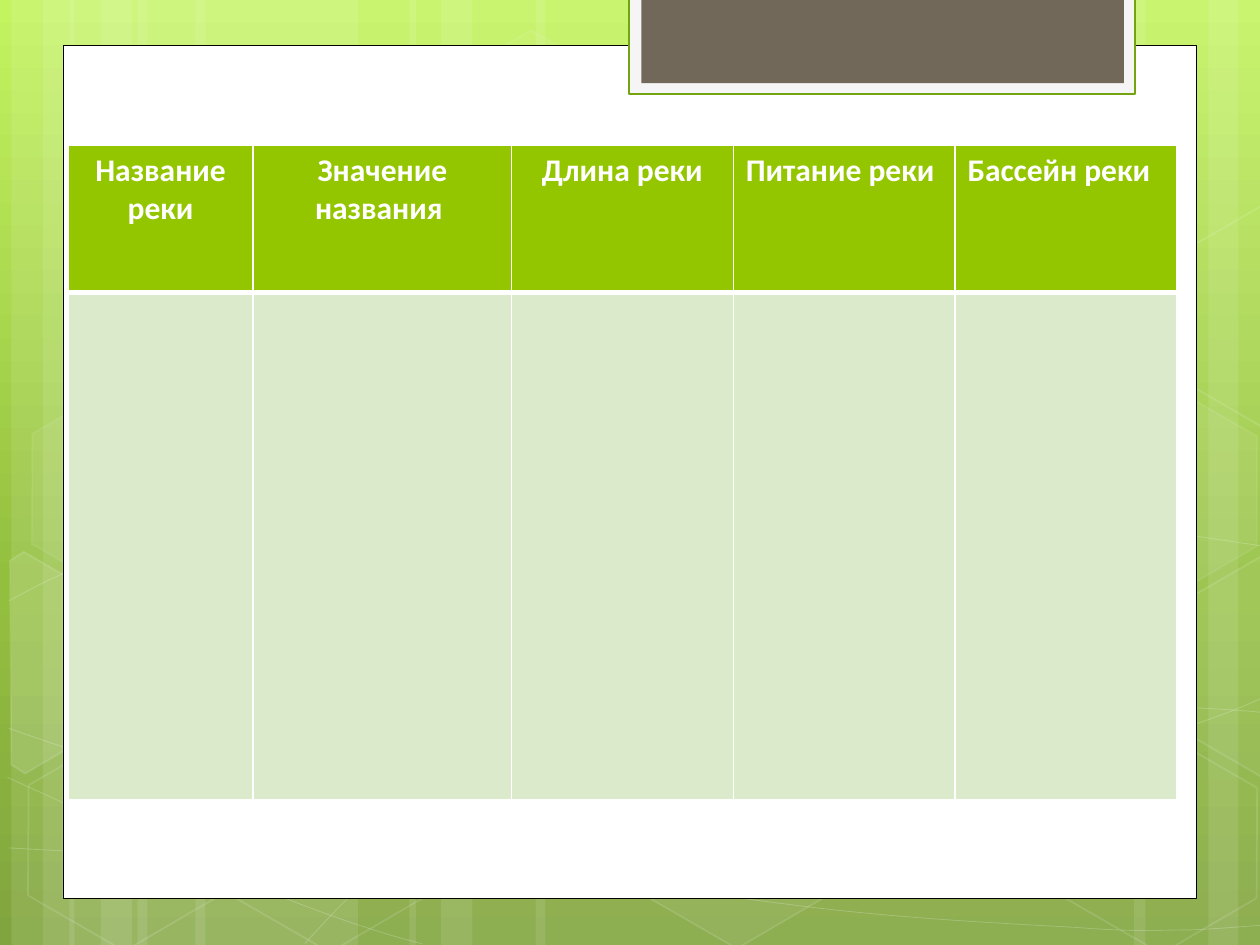
from copy import deepcopy

from lxml import etree
from pptx import Presentation
from pptx.dml.color import RGBColor
from pptx.enum.shapes import MSO_SHAPE
from pptx.enum.text import PP_ALIGN
from pptx.oxml.ns import qn
from pptx.util import Pt

RECTANGLE = MSO_SHAPE.RECTANGLE
HEXAGON = MSO_SHAPE.HEXAGON
CENTER = PP_ALIGN.CENTER
LEFT = PP_ALIGN.LEFT

PX = 9144
SLIDE = (0, 0, 1000, 750)
WHITE = "FFFFFF"

GRADIENT = [(0, "C3F35F"), (0.62, "93BF3F"), (1, "81A53E")]
STRIPES = [
    (109, 175), (9, 50), (34, 83), (155, 175), (55, 50), (80, 83),
    (734, 175), (959, 50), (900, 83), (425, 309), (325, 50), (350, 83),
]
WAVES = [
    [(7, 673), (61, 676), (115, 679), (190, 678), (265, 677), (358, 675),
     (458, 665), (558, 655), (700, 636), (792, 617), (883, 598), (977, 568),
     (1007, 551)],
    [(7, 477), (36, 461), (65, 446), (121, 431), (178, 416), (259, 394),
     (347, 387), (436, 380), (544, 379), (654, 387), (764, 395), (947, 426),
     (1007, 434)],
    [(6, 617), (127, 672), (247, 727), (335, 749)],
    [(7, 578), (38, 589), (70, 600), (128, 616), (186, 631), (273, 656),
     (357, 673), (440, 690), (545, 708), (628, 718), (711, 729), (800, 733),
     (853, 736), (906, 740), (919, 738), (945, 738), (971, 737), (989, 735),
     (1007, 734)],
    [(242, 749), (260, 729), (278, 709), (302, 691), (326, 672), (360, 653),
     (388, 639), (416, 625), (433, 619), (469, 609), (506, 599), (573, 585),
     (608, 578), (644, 571), (649, 571), (680, 569), (711, 566), (760, 563),
     (794, 562), (829, 561), (886, 562), (886, 562), (908, 562), (930, 562),
     (953, 562), (971, 563), (988, 564), (997, 565), (1006, 566), (1003, 565),
     (1006, 566)],
]
HEXAGONS = [
    (334, 36, 4, 8), (497, 589, 6, 12), (11, 591, None, 12), (14, 312, 7, 8),
    (174, 592, None, 12), (834, 593, None, 12), (834, 314, 7, 8),
]
CUT_HEXAGONS = [
    ([(8, 445), (19, 438), (96, 483), (95, 570), (20, 614), (9, 607)], 10),
    ([(926, 485), (1002, 441), (1009, 446), (1009, 613), (1002, 617), (926, 573)], 4),
    ([(926, 207), (1002, 163), (1010, 168), (1009, 335), (1002, 339), (926, 295)], None),
]
COLUMNS = [
    ("Название реки", 147, CENTER),
    ("Значение названия ", 205, CENTER),
    ("Длина реки", 176, CENTER),
    ("Питание реки", 176, LEFT),
    ("Бассейн реки", 176, LEFT),
]
ROW_HEIGHTS = [117, 403]


def px(*lengths):
    return [length * PX for length in lengths]


def paint(fill, color, opacity=100):
    fill.solid()
    fill.fore_color.rgb = RGBColor.from_string(color)
    if opacity < 100:
        srgb = fill._xPr.find(".//" + qn("a:srgbClr"))
        etree.SubElement(srgb, qn("a:alpha"), val=str(opacity * 1000))


def finish(shape, fill=None, opacity=100, line=None, width=1, line_opacity=100):
    shape.shadow.inherit = False
    if fill:
        paint(shape.fill, fill, opacity)
    else:
        shape.fill.background()
    if line:
        shape.line.width = Pt(width)
        paint(shape.line.fill, line, line_opacity)
    else:
        shape.line.fill.background()


def add_box(slide, kind, box, **style):
    shape = slide.shapes.add_shape(kind, *px(*box))
    finish(shape, **style)
    return shape


def add_outline(slide, points, close, origin, **style):
    left, top = origin
    points = [(left + x, top + y) for x, y in points]
    builder = slide.shapes.build_freeform(*px(*points[0]), scale=1.0)
    builder.add_line_segments([px(*point) for point in points[1:]], close=close)
    outline = builder.convert_to_shape()
    finish(outline, **style)
    return outline


def bend(outline):
    segments = list(outline._element.iter(qn("a:lnTo")))
    for start in range(0, len(segments), 3):
        first, second, third = segments[start:start + 3]
        curve = etree.Element(qn("a:cubicBezTo"))
        first.addprevious(curve)
        for segment in (first, second, third):
            curve.append(segment[0])
            segment.getparent().remove(segment)


def add_background(slide):
    fill = slide.background.fill
    fill.gradient()
    fill.gradient_angle = 270
    stops = slide._element.find(".//" + qn("a:gsLst"))
    stops.append(deepcopy(stops[0]))
    for stop, (position, color) in zip(fill.gradient_stops, GRADIENT):
        stop.position = position
        stop.color.rgb = RGBColor.from_string(color)


def add_backdrop(slide, box):
    left, top, _, height = box
    for x, width in STRIPES:
        add_box(slide, RECTANGLE, (left + x, top, width, height), fill=WHITE, opacity=10)
    for knots in WAVES:
        bend(add_outline(slide, knots, False, (left, top),
                         line=WHITE, width=0.5, line_opacity=20))
    for x, y, opacity, line_opacity in HEXAGONS:
        hexagon = add_box(slide, HEXAGON, (left + x, top + y, 175, 152),
                          fill=opacity and WHITE, opacity=opacity or 100,
                          line=WHITE, line_opacity=line_opacity)
        hexagon.adjustments[0] = 0.285
        hexagon.rotation = 30
    for corners, opacity in CUT_HEXAGONS:
        add_outline(slide, corners, True, (left, top),
                    fill=opacity and WHITE, opacity=opacity or 100,
                    line=WHITE, line_opacity=12)


def add_panel(slide, box):
    left, top, _, _ = box
    add_box(slide, RECTANGLE, box, fill=WHITE, line="000000", width=0.5)
    tab_left, tab_top = left + 449, top - 38
    add_box(slide, RECTANGLE, (tab_left, tab_top, 402, 77),
            fill="F5F5F5", line="74A510", width=1.25)
    add_box(slide, RECTANGLE, (tab_left + 10, tab_top, 383, 68), fill="71685A")


def set_borders(cell, **widths):
    properties = cell._tc.get_or_add_tcPr()
    for index, side in enumerate("LRTB"):
        border = etree.Element(qn("a:ln" + side), w=str(Pt(widths.get(side, 1))))
        solid = etree.SubElement(border, qn("a:solidFill"))
        etree.SubElement(solid, qn("a:srgbClr"), val=WHITE)
        properties.insert(index, border)


def add_river_table(slide, box):
    table = slide.shapes.add_table(len(ROW_HEIGHTS), len(COLUMNS), *px(*box)).table
    for row, height in zip(table.rows, ROW_HEIGHTS):
        row.height = px(height)[0]
    for index, (heading, width, alignment) in enumerate(COLUMNS):
        table.columns[index].width = px(width)[0]
        header, body = table.cell(0, index), table.cell(1, index)
        paint(header.fill, "94C600")
        paint(body.fill, "DCEACC")
        set_borders(header, B=3)
        set_borders(body)
        paragraph = header.text_frame.paragraphs[0]
        paragraph.alignment = alignment
        run = paragraph.add_run()
        run.text = heading
        run.font.name = "Calibri"
        run.font.size = Pt(18)
        run.font.bold = True
        run.font.color.rgb = RGBColor.from_string(WHITE)


def main():
    presentation = Presentation()
    presentation.slide_width, presentation.slide_height = px(*SLIDE[2:])
    slide = presentation.slides.add_slide(presentation.slide_layouts[6])
    add_background(slide)
    add_backdrop(slide, SLIDE)
    add_panel(slide, (50, 36, 900, 677))
    add_river_table(slide, (54, 115, 880, 520))
    presentation.save("out.pptx")


if __name__ == "__main__":
    main()
